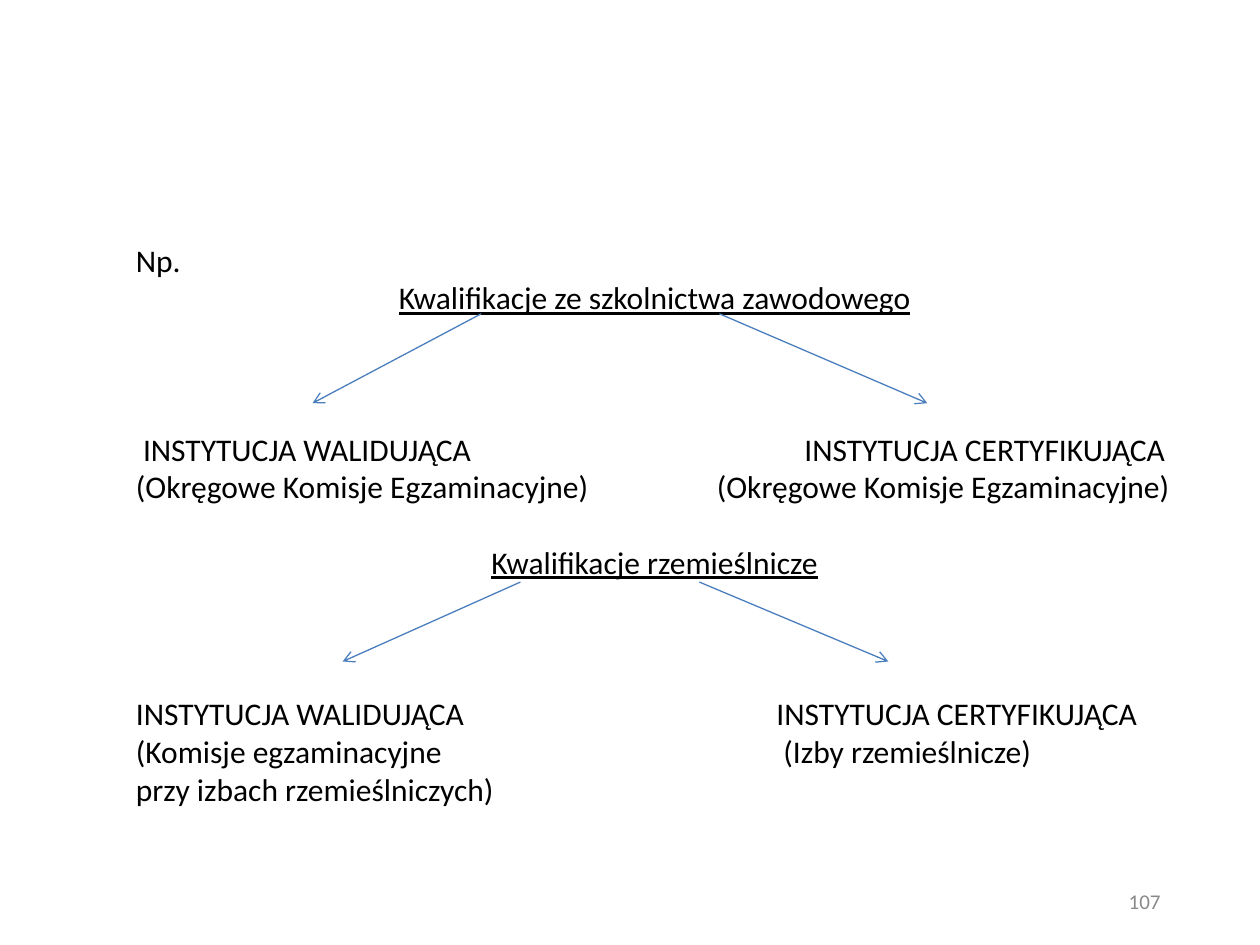
import pptx
import pptx.util
import pptx.dml.color
import pptx.enum.shapes
import pptx.enum.text
import pptx.oxml
import pptx.oxml.ns
import lxml.etree

Pt = pptx.util.Pt
ALIGN = pptx.enum.text.PP_ALIGN
ANCHOR = pptx.enum.text.MSO_ANCHOR
LINE = 21.6  # height of one text line

# text, tab stop, lines of space before, is heading
DIAGRAM_LINES = [
    ("Np.", None, 0, False),
    ("Kwalifikacje ze szkolnictwa zawodowego", None, 0, True),
    (" INSTYTUCJA WALIDUJĄCA\tINSTYTUCJA CERTYFIKUJĄCA", 382, 3, False),
    ("(Okręgowe Komisje Egzaminacyjne)\t(Okręgowe Komisje Egzaminacyjne)", 332, 0, False),
    ("Kwalifikacje rzemieślnicze", None, 1, True),
    ("INSTYTUCJA WALIDUJĄCA\tINSTYTUCJA CERTYFIKUJĄCA", 366, 3, False),
    ("(Komisje egzaminacyjne\t(Izby rzemieślnicze)", 370, 0, False),
    ("przy izbach rzemieślniczych)", None, 0, False),
]

# start y, end y, (start x, end x) of each arrow
ARROW_PAIRS = [
    (179.3, 230.4, [(275, 178.6), (411.1, 529.9)]),
    (332.6, 378, [(297.4, 195.8), (399.6, 507.6)]),
]


def color(hex_value):
    return pptx.dml.color.RGBColor.from_string(hex_value)


def set_values(target, values):
    for name, value in values.items():
        setattr(target, name, value)


def add_text_box(slide, left, top, width, height, anchor):
    box = slide.shapes.add_textbox(Pt(left), Pt(top), Pt(width), Pt(height))
    set_values(box.text_frame, {"word_wrap": True, "vertical_anchor": anchor})
    return box.text_frame


def add_run(paragraph, text, size, hex_value, underline=False):
    run = paragraph.add_run()
    run.text = text
    set_values(run.font, {"name": "Calibri", "size": Pt(size), "underline": underline})
    run.font.color.rgb = color(hex_value)


def add_tab_stop(paragraph, position):
    properties = paragraph._p.get_or_add_pPr()
    tabs = lxml.etree.SubElement(properties, pptx.oxml.ns.qn("a:tabLst"))
    lxml.etree.SubElement(tabs, pptx.oxml.ns.qn("a:tab"), pos=str(Pt(position)), algn="l")


def add_diagram_text(slide):
    frame = add_text_box(slide, 70.6, 133.9, 607, 356.4, ANCHOR.TOP)
    for index, (text, tab, gap, heading) in enumerate(DIAGRAM_LINES):
        paragraph = frame.add_paragraph() if index else frame.paragraphs[0]
        if tab:
            add_tab_stop(paragraph, tab)
        paragraph.alignment = ALIGN.CENTER if heading else ALIGN.LEFT
        if gap:
            paragraph.space_before = Pt(gap * LINE)
        add_run(paragraph, text, 18, "000000", heading)


def add_arrow(slide, start_x, start_y, end_x, end_y):
    arrow = slide.shapes.add_connector(
        pptx.enum.shapes.MSO_CONNECTOR.STRAIGHT,
        Pt(start_x), Pt(start_y), Pt(end_x), Pt(end_y))
    arrow.line.width = Pt(0.75)
    arrow.line.color.rgb = color("4B7EBC")
    lxml.etree.SubElement(arrow.line._get_or_add_ln(),
                          pptx.oxml.ns.qn("a:tailEnd"), type="arrow")
    lxml.etree.SubElement(arrow._element.spPr, pptx.oxml.ns.qn("a:effectLst"))


def add_slide_number(slide):
    frame = add_text_box(slide, 508.3, 500.4, 162, 28.8, ANCHOR.MIDDLE)
    paragraph = frame.paragraphs[0]
    paragraph.alignment = ALIGN.RIGHT
    add_run(paragraph, "107", 12, "898989")


def main():
    presentation = pptx.Presentation()
    set_values(presentation, {"slide_width": Pt(720), "slide_height": Pt(540)})
    slide = presentation.slides.add_slide(presentation.slide_layouts[6])
    add_slide_number(slide)
    add_diagram_text(slide)
    for start_y, end_y, spans in ARROW_PAIRS:
        for start_x, end_x in spans:
            add_arrow(slide, start_x, start_y, end_x, end_y)
    presentation.save("out.pptx")


if __name__ == "__main__":
    main()
